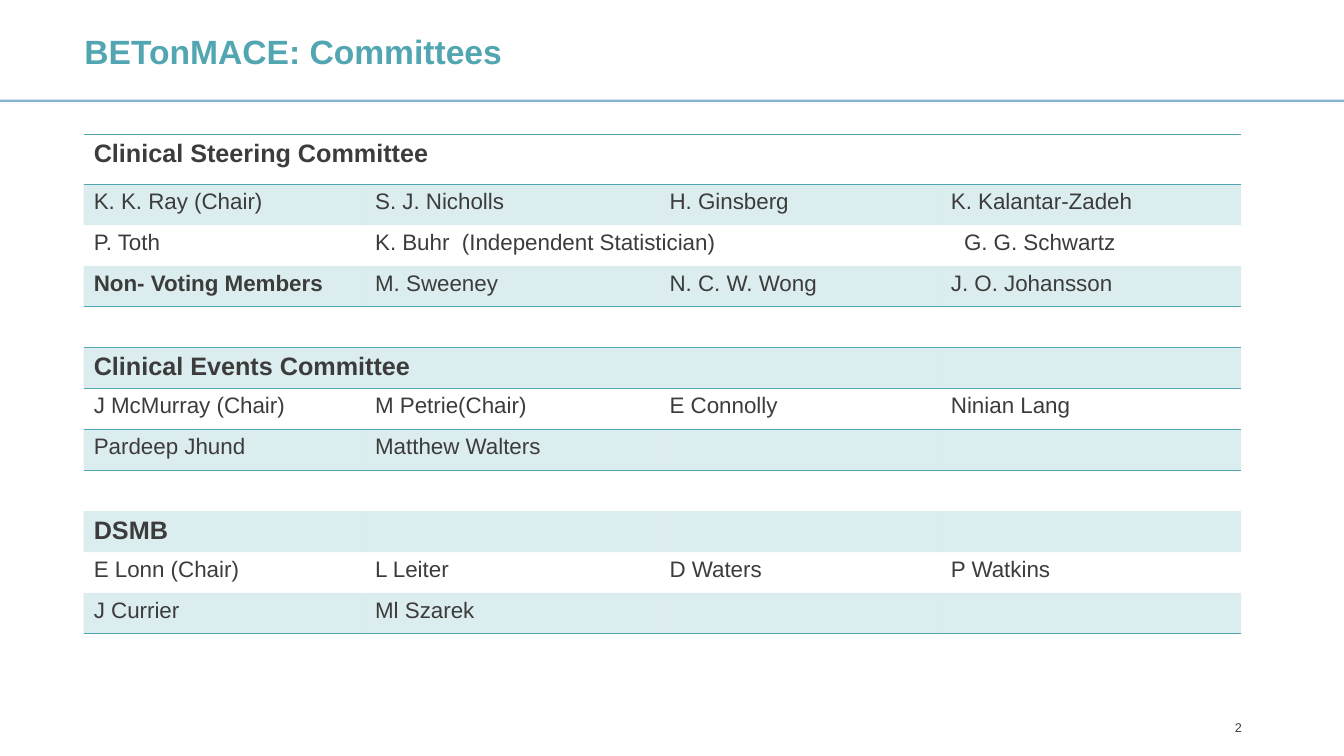
"""Build the BETonMACE committees slide."""
import pptx
import pptx.dml.color
import pptx.enum.shapes
import pptx.enum.text
import pptx.oxml
import pptx.oxml.ns
import pptx.util

Cm = pptx.util.Cm
Pt = pptx.util.Pt
ALIGN = pptx.enum.text.PP_ALIGN
ANCHOR = pptx.enum.text.MSO_ANCHOR
NS = pptx.oxml.ns.nsdecls("a")

WIDTH, HEIGHT = 33.87, 19.05
COLUMNS = [7.09, 7.42, 7.09, 0.33, 7.24]
HEADER_HEIGHT, ROW_HEIGHT = 1.26, 1.03
COMMITTEES = [
    ["Clinical Steering Committee"],
    ["K. K. Ray (Chair)", "S. J. Nicholls", "H. Ginsberg", "K. Kalantar-Zadeh"],
    ["P. Toth", "K. Buhr  (Independent Statistician)", "", "", "G. G. Schwartz"],
    ["Non- Voting Members", "M. Sweeney", "N. C. W. Wong", "J. O. Johansson"],
    [],
    ["Clinical Events Committee"],
    ["J McMurray (Chair)", "M Petrie(Chair)", "E Connolly", "Ninian Lang"],
    ["Pardeep Jhund", "Matthew Walters"],
    [],
    ["DSMB"],
    ["E Lonn (Chair)", "L Leiter", "D Waters", "P Watkins"],
    ["J Currier", "Ml Szarek"],
]
HEADINGS = {"Clinical Steering Committee", "Clinical Events Committee", "DSMB"}
BOLD = HEADINGS | {"Non- Voting Members"}
SHADED_ROWS = {1, 3, 5, 7, 9, 11}
RULES = {0, 1, 4, 5, 6, 7, 8, 12}
MERGES = {0: [(0, 2), (3, 4)], 2: [(1, 3)], 4: [(0, 2), (3, 4)], 5: [(0, 2), (3, 4)]}


class Deck:
    """Hold the style and the current slide."""

    font = "Arial"
    colors = {"teal": "51A6B1", "text": "3C3C3C", "rule": "0D67A2"}

    def __init__(self):
        self.prs = pptx.Presentation()
        self.prs.slide_width = Cm(WIDTH)
        self.prs.slide_height = Cm(HEIGHT)
        self.s = self.prs.slides.add_slide(self.prs.slide_layouts[6])

    def rgb(self, color):
        return pptx.dml.color.RGBColor.from_string(self.colors[color])

    def paint(self, fill, parent, color, opacity):
        fill.solid()
        fill.fore_color.rgb = self.rgb(color)
        clr = parent.find(pptx.oxml.ns.qn("a:solidFill"))[0]
        clr.append(pptx.oxml.parse_xml(f'<a:alpha {NS} val="{opacity * 1000}"/>'))

    def label(self, p, text, size, color="text", bold=False, align=ALIGN.LEFT):
        p.text = text
        p.alignment = align
        p.font.name = self.font
        p.font.size = Pt(size)
        p.font.bold = bold
        p.font.color.rgb = self.rgb(color)

    def text(self, left, top, width, height, text, size, anchor=ANCHOR.TOP, **style):
        tf = self.s.shapes.add_textbox(Cm(left), Cm(top), Cm(width), Cm(height)).text_frame
        tf.word_wrap = True
        tf.vertical_anchor = anchor
        self.label(tf.paragraphs[0], text, size, **style)

    def line(self, x1, y1, x2, y2, color, width, opacity):
        sp = self.s.shapes.add_connector(
            pptx.enum.shapes.MSO_CONNECTOR.STRAIGHT, Cm(x1), Cm(y1), Cm(x2), Cm(y2))
        sp.line.width = Pt(width)
        spPr = sp._element.spPr
        self.paint(sp.line.fill, spPr.find(pptx.oxml.ns.qn("a:ln")), color, opacity)
        spPr.append(pptx.oxml.parse_xml(f"<a:effectLst {NS}/>"))

    def borders(self, cell, top, bottom):
        tcPr = cell._tc.get_or_add_tcPr()
        solid = f'<a:solidFill><a:srgbClr val="{self.colors["teal"]}"/></a:solidFill>'
        for side, shown in (("L", False), ("R", False), ("T", top), ("B", bottom)):
            paint = solid if shown else "<a:noFill/>"
            tcPr.append(pptx.oxml.parse_xml(f'<a:ln{side} {NS} w="12700">{paint}</a:ln{side}>'))

    def table(self, left, top, rows):
        heights = [HEADER_HEIGHT] + [ROW_HEIGHT] * (len(rows) - 1)
        table = self.s.shapes.add_table(
            len(rows), len(COLUMNS), Cm(left), Cm(top), Cm(sum(COLUMNS)), Cm(sum(heights))).table
        table.first_row = table.horz_banding = False
        for column, width in zip(table.columns, COLUMNS):
            column.width = Cm(width)
        for i, (names, height) in enumerate(zip(rows, heights)):
            table.rows[i].height = Cm(height)
            for cell in table.rows[i].cells:
                self.borders(cell, i in RULES, i + 1 in RULES)
                if i in SHADED_ROWS:
                    self.paint(cell.fill, cell._tc.tcPr, "teal", 20)
                else:
                    cell.fill.background()
            for first, last in MERGES.get(i, [(3, 4)]):
                table.cell(i, first).merge(table.cell(i, last))
            for j, name in enumerate(names):
                if name:
                    self.label(table.cell(i, j).text_frame.paragraphs[0], name,
                               18 if name in HEADINGS else 16, bold=name in BOLD)


def main():
    deck = Deck()
    deck.line(0, 2.54, WIDTH, 2.54, "rule", 1.5, 50)
    deck.text(1.88, 0.66, 26.5, 1.85, "BETonMACE: Committees", 24, color="teal", bold=True)
    deck.text(23.93, 17.98, 7.62, 0.69, "2", 9, anchor=ANCHOR.MIDDLE, align=ALIGN.RIGHT)
    deck.table(2.11, 3.38, COMMITTEES)
    deck.prs.save("out.pptx")


if __name__ == "__main__":
    main()
